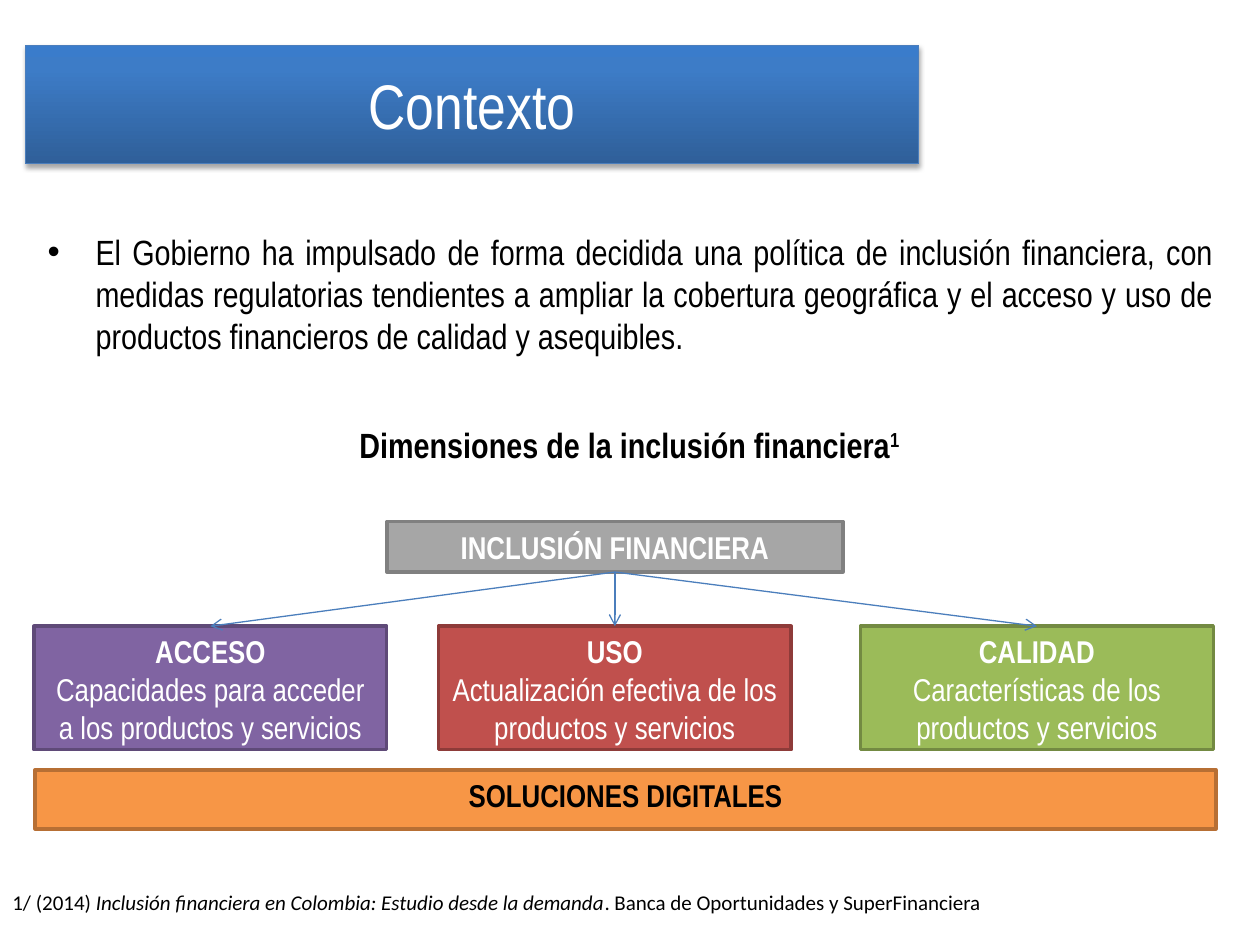
from lxml import etree
from pptx import Presentation
from pptx.dml.color import RGBColor
from pptx.enum.shapes import MSO_CONNECTOR, MSO_SHAPE
from pptx.enum.text import MSO_ANCHOR, MSO_AUTO_SIZE, PP_ALIGN
from pptx.oxml import parse_xml
from pptx.oxml.ns import nsdecls, qn
from pptx.util import Inches, Pt

LEFT, CENTER, JUSTIFY = PP_ALIGN.LEFT, PP_ALIGN.CENTER, PP_ALIGN.JUSTIFY
TOP, MIDDLE = MSO_ANCHOR.TOP, MSO_ANCHOR.MIDDLE
RECTANGLE, STRAIGHT = MSO_SHAPE.RECTANGLE, MSO_CONNECTOR.STRAIGHT
GROW, FIXED = MSO_AUTO_SIZE.SHAPE_TO_FIT_TEXT, MSO_AUTO_SIZE.NONE
TOP_SIDE, BOTTOM_SIDE = 0, 2
TITLE_ONLY = 5

WHITE = RGBColor(0xFF, 0xFF, 0xFF)
BLACK = RGBColor(0, 0, 0)
BLUE = RGBColor(0x4B, 0x7E, 0xBC)
GRAY, GRAY_EDGE = RGBColor(0xA6, 0xA6, 0xA6), RGBColor(0x80, 0x80, 0x80)
PURPLE, PURPLE_EDGE = RGBColor(0x80, 0x64, 0xA2), RGBColor(0x5F, 0x4A, 0x78)
RED, RED_EDGE = RGBColor(0xC0, 0x50, 0x4D), RGBColor(0x8E, 0x3B, 0x39)
GREEN, GREEN_EDGE = RGBColor(0x9B, 0xBB, 0x59), RGBColor(0x73, 0x8A, 0x42)
ORANGE, ORANGE_EDGE = RGBColor(0xF7, 0x96, 0x46), RGBColor(0xB7, 0x6F, 0x34)
TITLE_STOPS = [
    (0, RGBColor(0x2F, 0x5F, 0x99)),
    (80, RGBColor(0x3D, 0x7C, 0xC7)),
    (100, RGBColor(0x3A, 0x7C, 0xCB)),
]

DIMENSIONS = [
    (0.27, "ACCESO", "Capacidades para acceder a los productos y servicios",
     PURPLE, PURPLE_EDGE),
    (3.48, "USO", "Actualización efectiva de los productos y servicios",
     RED, RED_EDGE),
    (6.83, "CALIDAD", "Características de los productos y servicios",
     GREEN, GREEN_EDGE),
]


def write(shape, paragraphs, *, size, color=BLACK, font="Arial Narrow",
          align=CENTER, anchor=TOP, fit=FIXED, bullet=False):
    """Fill shape with paragraphs, each a list of (text, style letters).

    Style letters: b bold, i italic, ^ superscript.
    """
    frame = shape.text_frame
    frame.word_wrap = True
    frame.auto_size = fit
    frame.vertical_anchor = anchor
    for index, runs in enumerate(paragraphs):
        paragraph = frame.add_paragraph() if index else frame.paragraphs[0]
        paragraph.alignment = align
        if bullet:
            add_bullet(paragraph)
        for text, style in runs:
            run = paragraph.add_run()
            run.text = text
            run.font.name = font
            run.font.size = Pt(size)
            run.font.color.rgb = color
            run.font.bold = "b" in style
            run.font.italic = "i" in style
            if "^" in style:
                run.font._element.set("baseline", "30000")


def add_bullet(paragraph):
    properties = paragraph._p.get_or_add_pPr()
    properties.set("marL", str(Inches(0.38)))
    properties.set("indent", str(-Inches(0.38)))
    etree.SubElement(properties, qn("a:buFont"), typeface="Arial")
    etree.SubElement(properties, qn("a:buChar"), char="•")


def add_text(slide, box, paragraphs, **text_format):
    write(slide.shapes.add_textbox(*map(Inches, box)), paragraphs, **text_format)


def add_block(slide, box, paragraphs, fill, edge, **text_format):
    block = slide.shapes.add_shape(RECTANGLE, *map(Inches, box))
    block.shadow.inherit = False
    block.fill.solid()
    block.fill.fore_color.rgb = fill
    block.line.color.rgb = edge
    block.line.width = Pt(2)
    write(block, paragraphs, size=18, **text_format)
    return block


def add_arrow(slide, parent, child):
    arrow = slide.shapes.add_connector(STRAIGHT, 0, 0, 0, 0)
    arrow.begin_connect(parent, BOTTOM_SIDE)
    arrow.end_connect(child, TOP_SIDE)
    arrow.line.color.rgb = BLUE
    arrow.line.width = Pt(0.75)
    etree.SubElement(arrow.line._get_or_add_ln(), qn("a:tailEnd"), type="arrow")
    etree.SubElement(arrow._element.spPr, qn("a:effectLst"))


def place_title(slide, box):
    """Format the title as a banner with an upward gradient and soft shadow."""
    title = slide.shapes.title
    title.left, title.top, title.width, title.height = map(Inches, box)
    title.fill.gradient()
    title.line.color.rgb = BLUE
    title.line.width = Pt(0.75)
    title.shadow.inherit = False

    properties = title._element.spPr
    stops = "".join(
        f'<a:gs pos="{position * 1000}"><a:srgbClr val="{color}"/></a:gs>'
        for position, color in TITLE_STOPS)
    gradient = parse_xml(
        f'<a:gradFill {nsdecls("a")} rotWithShape="1"><a:gsLst>{stops}</a:gsLst>'
        '<a:lin ang="16200000" scaled="0"/></a:gradFill>')
    properties.replace(properties.find(qn("a:gradFill")), gradient)
    properties.find(qn("a:effectLst")).append(parse_xml(
        f'<a:outerShdw {nsdecls("a")} blurRad="{Pt(3.1)}" dist="{Pt(1.8)}" '
        'dir="5400000" rotWithShape="0"><a:srgbClr val="000000">'
        '<a:alpha val="35000"/></a:srgbClr></a:outerShdw>'))
    write(title, [[("Contexto", "")]], size=36, color=WHITE, anchor=MIDDLE)


def place_dimensions(slide, top):
    """Draw the heading block and its three dimensions, with top as upper edge."""
    parent = add_block(slide, (3.07, top, 3.62, 0.4),
                       [[("INCLUSIÓN FINANCIERA", "b")]],
                       GRAY, GRAY_EDGE, color=WHITE, fit=GROW)
    children = [
        add_block(slide, (left, top + 0.83, 2.8, 0.98),
                  [[(name, "b")], [(meaning, "")]],
                  fill, edge, color=WHITE, fit=GROW)
        for left, name, meaning, fill, edge in DIMENSIONS
    ]
    for child in children:
        add_arrow(slide, parent, child)


def main():
    presentation = Presentation()
    presentation.slide_width = Inches(10)
    presentation.slide_height = Inches(7.5)
    slide = presentation.slides.add_slide(presentation.slide_layouts[TITLE_ONLY])

    place_title(slide, (0.2, 0.36, 7.09, 0.94))
    add_text(slide, (0.28, 1.78, 9.45, 1.18), [[(
        "El Gobierno ha impulsado de forma decidida una política de inclusión "
        "financiera, con medidas regulatorias tendientes a ampliar la cobertura "
        "geográfica y el acceso y uso de productos financieros de calidad y "
        "asequibles.", "")]], size=20, align=JUSTIFY, bullet=True)
    add_text(slide, (2.45, 3.31, 5.09, 0.47),
             [[("Dimensiones de la inclusión financiera", "b"), ("1", "b^")]],
             size=20)
    place_dimensions(slide, 4.14)
    add_block(slide, (0.28, 6.11, 9.37, 0.47),
              [[("SOLUCIONES DIGITALES", "b")]], ORANGE, ORANGE_EDGE)
    add_text(slide, (0, 7.01, 10, 0.3), [[
        ("1/ (2014) ", ""),
        ("Inclusión financiera en Colombia: Estudio desde la demanda", "i"),
        (". Banca de Oportunidades y SuperFinanciera", ""),
    ]], size=12, font="Calibri", align=LEFT, fit=GROW)

    presentation.save("out.pptx")


if __name__ == "__main__":
    main()
